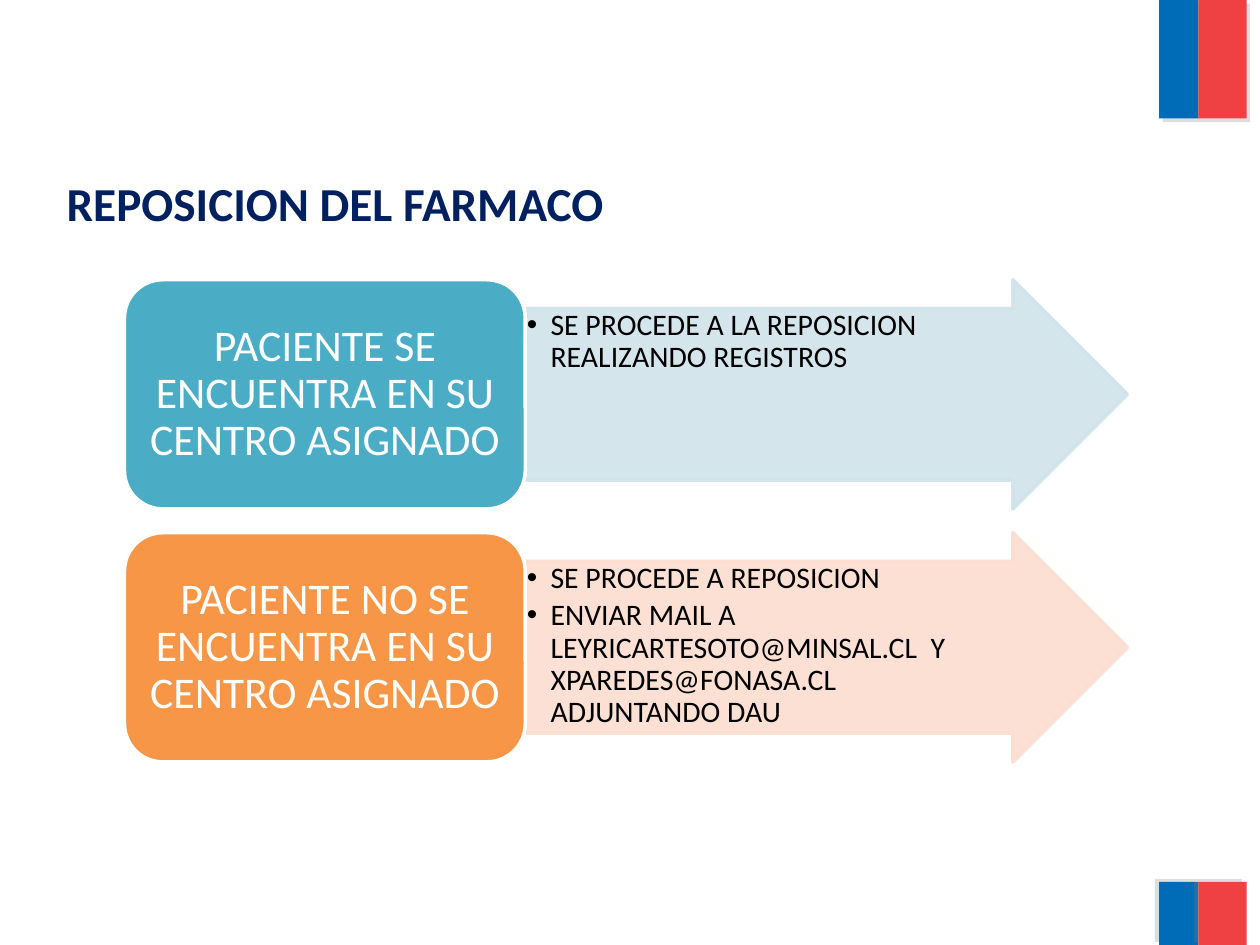
import pptx
import pptx.util
import pptx.dml.color
import pptx.enum.shapes
import pptx.enum.text
import pptx.oxml
import pptx.oxml.ns
from lxml import etree

Cm = pptx.util.Cm
Pt = pptx.util.Pt
SHAPE = pptx.enum.shapes.MSO_SHAPE
ALIGN = pptx.enum.text.PP_ALIGN
ANCHOR = pptx.enum.text.MSO_ANCHOR
qn = pptx.oxml.ns.qn

COLORS = {
    "navy": "002060", "blue": "006CB7", "red": "EF4144", "teal": "4BACC6",
    "orange": "F79646", "pale_teal": "D0E3EA", "pale_orange": "FCDDCF",
    "white": "FFFFFF", "black": "000000", "gray": "808080",
}


def rgb(name):
    return pptx.dml.color.RGBColor.from_string(COLORS[name])


class SlideBuilder:
    font = "Calibri"

    def __init__(self, prs):
        self.s = prs.slides.add_slide(prs.slide_layouts[5])

    def format_runs(self, p, size, color, bold=False):
        for r in p.runs:
            r.font.name = self.font
            r.font.size = Pt(size)
            r.font.bold = bold
            r.font.color.rgb = rgb(color)

    def shape(self, kind, box, fill, line=None):
        sp = self.s.shapes.add_shape(kind, *map(Cm, box))
        sp.shadow.inherit = False
        sp.fill.solid()
        sp.fill.fore_color.rgb = rgb(fill)
        if line:
            sp.line.color.rgb = rgb(line)
            sp.line.width = Pt(2)
        else:
            sp.line.fill.background()
        return sp

    def title(self, text, box):
        sp = self.s.shapes.title
        sp.left, sp.top, sp.width, sp.height = map(Cm, box)
        tf = sp.text_frame
        tf.text = text
        tf.word_wrap = False
        tf.auto_size = pptx.enum.text.MSO_AUTO_SIZE.NONE
        tf.vertical_anchor = ANCHOR.TOP
        p = tf.paragraphs[0]
        p.alignment = ALIGN.LEFT
        p.line_spacing = 0.8
        self.format_runs(p, 27, "navy", True)

    def flag_bar(self, box, fill, shadow_angle):
        sp = self.shape(SHAPE.RECTANGLE, box, fill)
        effects = sp._element.spPr.find(qn("a:effectLst"))
        shadow = etree.SubElement(
            effects, qn("a:outerShdw"), blurRad="0", dist=str(Pt(3)),
            dir=str(shadow_angle * 60000), algn="ctr", rotWithShape="0")
        color = etree.SubElement(shadow, qn("a:srgbClr"), val=COLORS["gray"])
        etree.SubElement(color, qn("a:alpha"), val="25000")

    def arrow(self, items, box, color):
        sp = self.shape(SHAPE.RIGHT_ARROW, box, color, color)
        sp.adjustments[0] = 0.75
        sp.adjustments[1] = 0.5
        for clr in sp._element.spPr.iter(qn("a:srgbClr")):
            etree.SubElement(clr, qn("a:alpha"), val="90000")
        tf = sp.text_frame
        tf.word_wrap = True
        tf.vertical_anchor = ANCHOR.TOP
        tf.margin_left = tf.margin_top = tf.margin_bottom = Cm(0.03)
        tf.margin_right = Cm(1.2)
        tf.text = "\n".join(items)
        for p in tf.paragraphs:
            pPr = p._p.get_or_add_pPr()
            pPr.set("marL", str(Cm(0.48)))
            pPr.set("indent", str(-Cm(0.48)))
            etree.SubElement(pPr, qn("a:buFont"), typeface="Arial")
            etree.SubElement(pPr, qn("a:buChar"), char="•")
            p.alignment = ALIGN.LEFT
            p.line_spacing = 0.9
            p.space_after = Pt(3)
            self.format_runs(p, 17, "black")

    def case_box(self, text, box, color):
        sp = self.shape(SHAPE.ROUNDED_RECTANGLE, box, color, "white")
        tf = sp.text_frame
        tf.word_wrap = True
        tf.vertical_anchor = ANCHOR.MIDDLE
        tf.text = text
        p = tf.paragraphs[0]
        p.alignment = ALIGN.CENTER
        p.line_spacing = 0.9
        self.format_runs(p, 25, "white")


def main():
    prs = pptx.Presentation()
    prs.slide_width, prs.slide_height = Cm(25.4), Cm(19.05)
    b = SlideBuilder(prs)

    for top, height, angle in ((0, 2.39, 45), (17.78, 1.27, 215)):
        b.flag_bar((23.37, top, 0.79, height), "blue", angle)
        b.flag_bar((24.16, top, 0.97, height), "red", angle)

    b.title("REPOSICION DEL FARMACO", (1.09, 3.61, 11.66, 1.17))

    cases = [
        ("PACIENTE SE ENCUENTRA EN SU CENTRO ASIGNADO", "teal", "pale_teal",
         ["SE PROCEDE A LA REPOSICION REALIZANDO REGISTROS"]),
        ("PACIENTE NO SE ENCUENTRA EN SU CENTRO ASIGNADO", "orange", "pale_orange",
         ["SE PROCEDE A REPOSICION",
          "ENVIAR MAIL A LEYRICARTESOTO@MINSAL.CL  Y XPAREDES@FONASA.CL ADJUNTANDO DAU"]),
    ]
    left, top, box_width, arrow_width, height, pitch = 2.51, 5.64, 8.08, 12.14, 4.62, 5.1
    for i, (text, color, pale, items) in enumerate(cases):
        y = top + i * pitch
        b.arrow(items, (left + box_width, y, arrow_width, height), pale)
        b.case_box(text, (left, y, box_width, height), color)

    prs.save("out.pptx")


if __name__ == "__main__":
    main()
